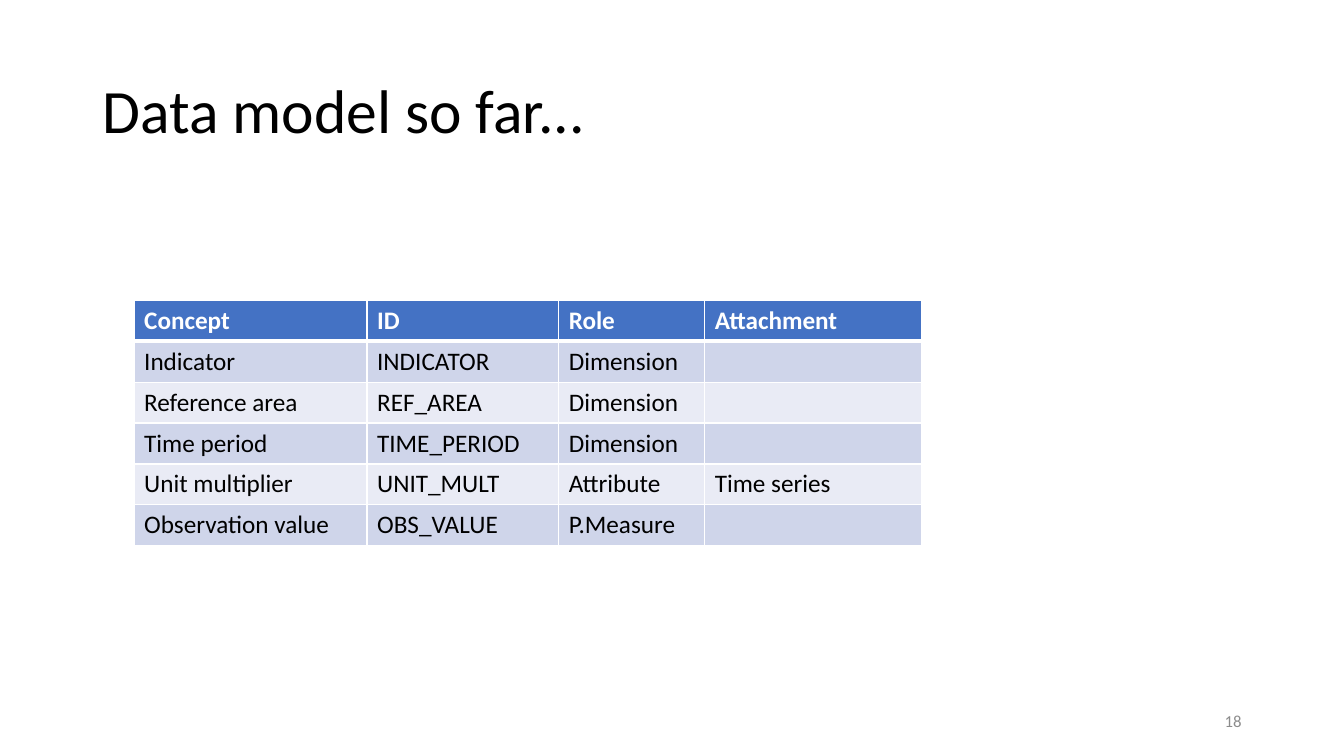
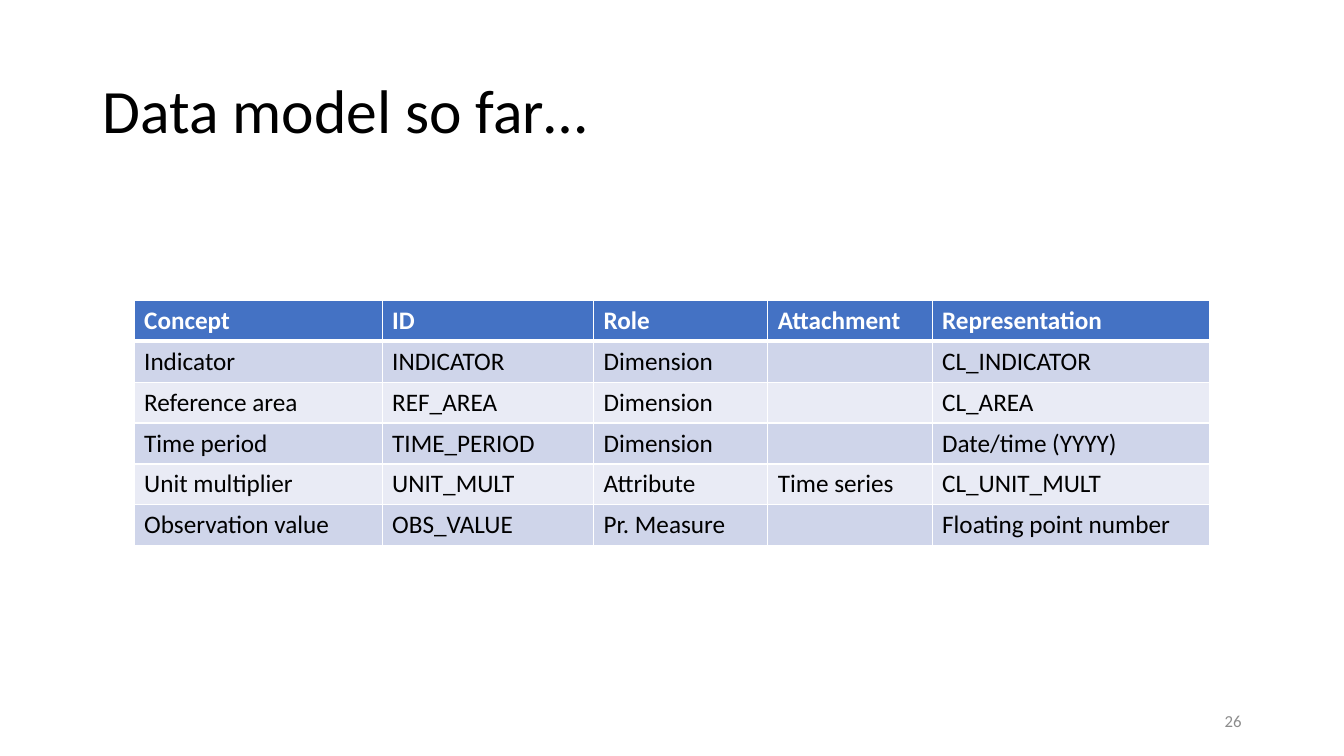
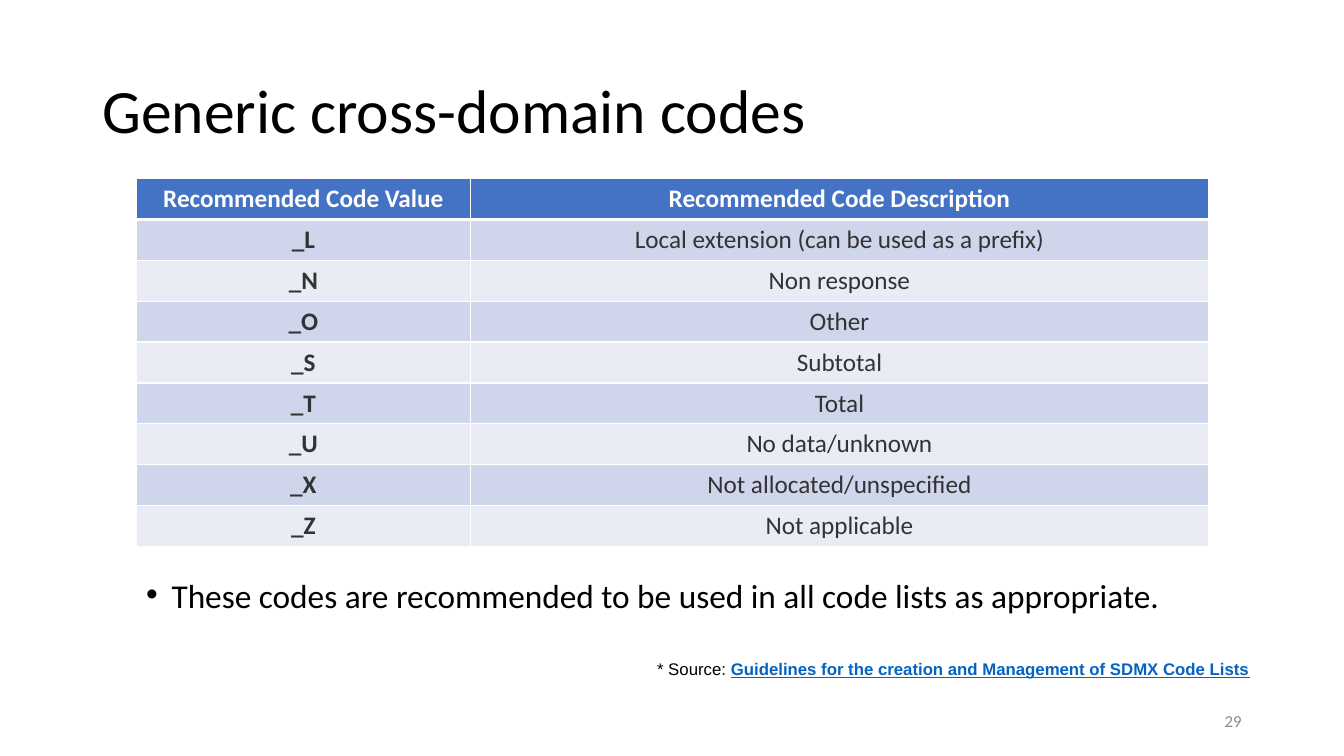
from dataclasses import dataclass

from lxml.etree import SubElement
from pptx import Presentation
from pptx.dml.color import RGBColor
from pptx.enum.text import MSO_ANCHOR as Anchor, MSO_AUTO_SIZE as AutoSize, PP_ALIGN as Align
from pptx.oxml.ns import qn
from pptx.util import Cm, Pt


@dataclass(frozen=True)
class Theme:
    font: str = "Calibri"
    source_font: str = "Arial"
    text: str = "000000"
    code_text: str = "333333"
    muted: str = "8C8C8C"
    link: str = "0563C1"
    white: str = "FFFFFF"
    header: str = "4472C4"
    bands: tuple[str, str] = ("CFD5EA", "E9EBF5")
    title_size: float = 44
    body_size: float = 23.8
    table_size: float = 18
    small_size: float = 12
    grid_line: float = 1
    header_line: float = 3


@dataclass(frozen=True)
class Box:
    left: float
    top: float
    width: float
    height: float


@dataclass(frozen=True)
class TableSpec:
    left: float
    top: float
    widths: tuple[float, ...]
    rows: tuple[tuple[str, ...], ...]
    text_color: str
    centred: bool = False
    bold_first: bool = False


@dataclass(frozen=True)
class Page:
    title: str
    number: str
    table: TableSpec
    remark: str = ""
    source: tuple[str, str] | None = None


THEME = Theme()
TITLE_BOX = Box(2.33, 1.01, 29.21, 3.68)
REMARK_BOX = Box(3.43, 14.55, 28.12, 1.47)
NUMBER_BOX = Box(23.92, 17.65, 7.62, 1.02)
SOURCE_BOX = Box(16.31, 16.48, 15.58, 0.76)
ROW_HEIGHT = 1.03
CENTRED_MARGIN = 0.18
BULLET_INDENT = 0.64
TITLE_AND_CONTENT, TITLE_ONLY = 1, 5

PAGES = (
    Page("Data model so far...", "18", TableSpec(
        3.38, 7.57, (5.87, 4.83, 3.68, 5.46), (
            ("Concept", "ID", "Role", "Attachment"),
            ("Indicator", "INDICATOR", "Dimension", ""),
            ("Reference area", "REF_AREA", "Dimension", ""),
            ("Time period", "TIME_PERIOD", "Dimension", ""),
            ("Unit multiplier", "UNIT_MULT", "Attribute", "Time series"),
            ("Observation value", "OBS_VALUE", "P.Measure", ""),
        ), THEME.text)),
    Page("Data model so far…", "26", TableSpec(
        3.38, 7.57, (6.25, 5.33, 4.39, 4.14, 6.99), (
            ("Concept", "ID", "Role", "Attachment", "Representation"),
            ("Indicator", "INDICATOR", "Dimension", "", "CL_INDICATOR"),
            ("Reference area", "REF_AREA", "Dimension", "", "CL_AREA"),
            ("Time period", "TIME_PERIOD", "Dimension", "", "Date/time (YYYY)"),
            ("Unit multiplier", "UNIT_MULT", "Attribute", "Time series", "CL_UNIT_MULT"),
            ("Observation value", "OBS_VALUE", "Pr. Measure", "", "Floating point number"),
        ), THEME.text)),
    Page("Generic cross-domain codes", "29", TableSpec(
        3.43, 4.5, (8.43, 18.59), (
            ("Recommended Code Value", "Recommended Code Description"),
            ("_L", "Local extension (can be used as a prefix)"),
            ("_N", "Non response"),
            ("_O", "Other"),
            ("_S", "Subtotal"),
            ("_T", "Total"),
            ("_U", "No data/unknown"),
            ("_X", "Not allocated/unspecified"),
            ("_Z", "Not applicable"),
        ), THEME.code_text, centred=True, bold_first=True),
        remark="These codes are recommended to be used in all code lists as appropriate.",
        source=("* Source: ", "Guidelines for the creation and Management of SDMX Code Lists")),
)


def place(shape, box: Box) -> None:
    shape.left, shape.top = Cm(box.left), Cm(box.top)
    shape.width, shape.height = Cm(box.width), Cm(box.height)


def style_font(font, size: float, color: str, name: str = THEME.font, bold: bool = False) -> None:
    font.name, font.size, font.bold = name, Pt(size), bold
    font.color.rgb = RGBColor.from_string(color)


def fill_placeholder(holder, box: Box, text: str, size: float, spacing: float):
    place(holder, box)
    frame = holder.text_frame
    frame.text = text
    frame.auto_size = AutoSize.NONE
    paragraph = frame.paragraphs[0]
    paragraph.alignment = Align.LEFT
    paragraph.line_spacing = spacing
    style_font(paragraph.runs[0].font, size, THEME.text)
    return frame


def add_title(slide, text: str) -> None:
    frame = fill_placeholder(slide.shapes.title, TITLE_BOX, text, THEME.title_size, 0.9)
    frame.vertical_anchor = Anchor.MIDDLE


def add_remark(slide, text: str) -> None:
    frame = fill_placeholder(slide.placeholders[1], REMARK_BOX, text, THEME.body_size, 0.8)
    frame.vertical_anchor = Anchor.TOP
    paragraph = frame.paragraphs[0]
    paragraph.space_before = Pt(10)
    properties = paragraph._p.get_or_add_pPr()
    properties.set("marL", str(Cm(BULLET_INDENT)))
    properties.set("indent", str(-Cm(BULLET_INDENT)))
    SubElement(properties, qn("a:buFont"), typeface=THEME.source_font)
    SubElement(properties, qn("a:buChar"), char="•")


def add_text_frame(slide, box: Box):
    frame = slide.shapes.add_textbox(
        Cm(box.left), Cm(box.top), Cm(box.width), Cm(box.height)).text_frame
    frame.word_wrap = True
    return frame


def add_number(slide, number: str) -> None:
    frame = add_text_frame(slide, NUMBER_BOX)
    frame.text = number
    frame.vertical_anchor = Anchor.MIDDLE
    paragraph = frame.paragraphs[0]
    paragraph.alignment = Align.RIGHT
    style_font(paragraph.runs[0].font, THEME.small_size, THEME.muted)


def add_source(slide, label: str, document: str) -> None:
    paragraph = add_text_frame(slide, SOURCE_BOX).paragraphs[0]
    for text, color, linked in ((label, THEME.text, False), (document, THEME.link, True)):
        run = paragraph.add_run()
        run.text = text
        style_font(run.font, THEME.small_size, color, THEME.source_font, linked)
        run.font.underline = linked


def set_borders(cell, row: int) -> None:
    properties = cell._tc.get_or_add_tcPr()
    thick_edge = {0: "lnB", 1: "lnT"}.get(row)
    for position, edge in enumerate(("lnL", "lnR", "lnT", "lnB")):
        width = THEME.header_line if edge == thick_edge else THEME.grid_line
        line = SubElement(properties, qn(f"a:{edge}"), w=str(Pt(width)))
        SubElement(SubElement(line, qn("a:solidFill")), qn("a:srgbClr"), val=THEME.white)
        properties.insert(position, line)


def style_cell(cell, spec: TableSpec, row: int, column: int) -> None:
    is_header = row == 0
    cell.fill.solid()
    cell.fill.fore_color.rgb = RGBColor.from_string(
        THEME.header if is_header else THEME.bands[(row - 1) % 2])
    set_borders(cell, row)
    cell.text_frame.text = spec.rows[row][column]
    paragraph = cell.text_frame.paragraphs[0]
    if spec.centred:
        paragraph.alignment = Align.CENTER
        cell.vertical_anchor = Anchor.MIDDLE
        cell.margin_left = cell.margin_right = Cm(CENTRED_MARGIN)
        cell.margin_top = cell.margin_bottom = Cm(0)
    for run in paragraph.runs:
        style_font(run.font, THEME.table_size, THEME.white if is_header else spec.text_color,
                   bold=is_header or (spec.bold_first and column == 0))


def add_data_table(slide, spec: TableSpec) -> None:
    table = slide.shapes.add_table(
        len(spec.rows), len(spec.widths), Cm(spec.left), Cm(spec.top),
        Cm(sum(spec.widths)), Cm(ROW_HEIGHT * len(spec.rows))).table
    for column, width in zip(table.columns, spec.widths):
        column.width = Cm(width)
    for row_index, row in enumerate(table.rows):
        row.height = Cm(ROW_HEIGHT)
        for column_index, cell in enumerate(row.cells):
            style_cell(cell, spec, row_index, column_index)


def add_page(deck, page: Page) -> None:
    layout = TITLE_AND_CONTENT if page.remark else TITLE_ONLY
    slide = deck.slides.add_slide(deck.slide_layouts[layout])
    add_title(slide, page.title)
    if page.remark:
        add_remark(slide, page.remark)
    add_number(slide, page.number)
    add_data_table(slide, page.table)
    if page.source:
        add_source(slide, *page.source)


def main() -> None:
    deck = Presentation()
    deck.slide_width, deck.slide_height = Cm(33.87), Cm(19.05)
    for page in PAGES:
        add_page(deck, page)
    deck.save("out.pptx")


if __name__ == "__main__":
    main()
